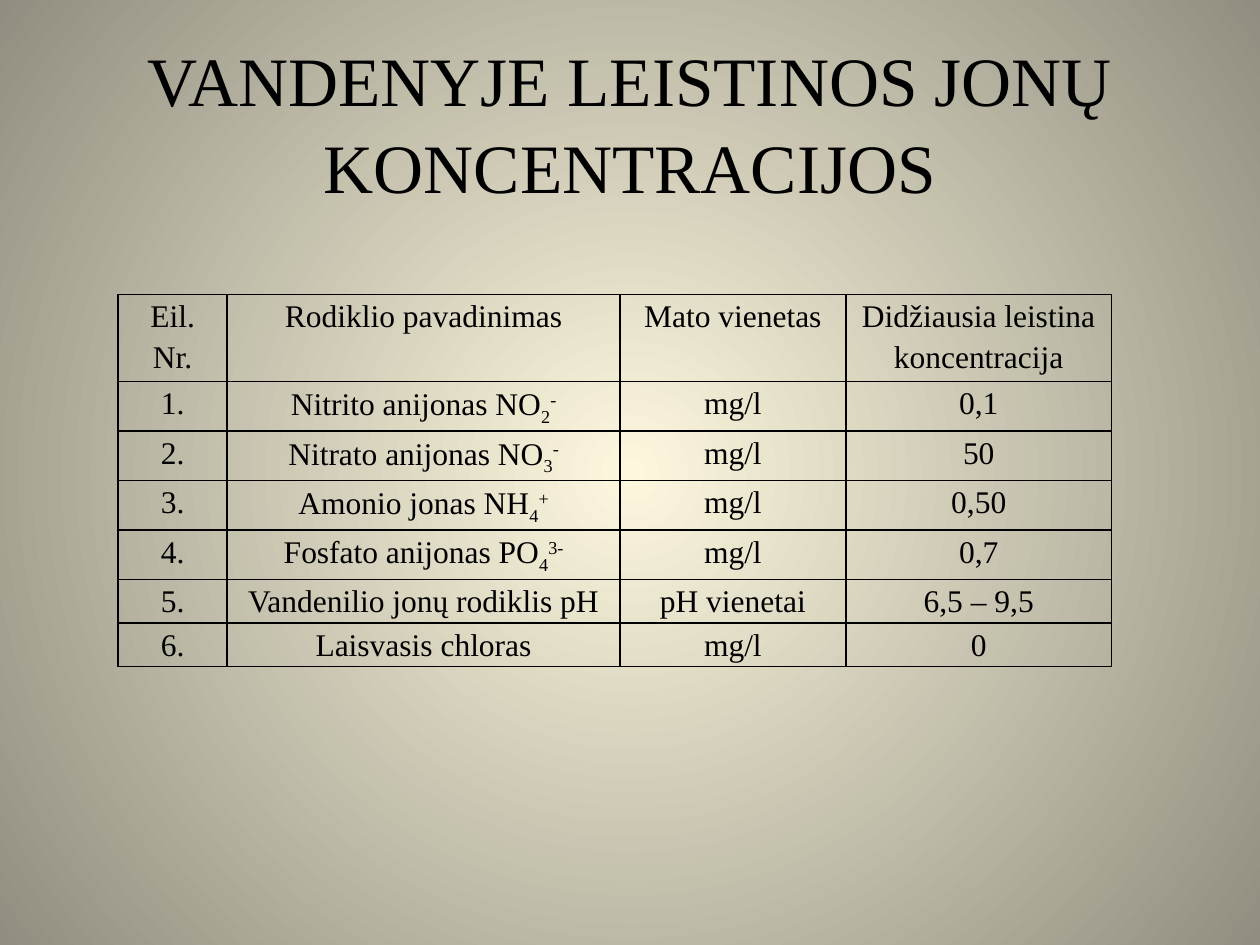
"""Builds a slide with a table of ion limits allowed in water."""
from lxml.etree import SubElement as Sub
from pptx import Presentation
from pptx.dml.color import RGBColor
from pptx.enum.text import MSO_ANCHOR as Anchor, PP_ALIGN as Align
from pptx.oxml.ns import qn
from pptx.util import Cm, Pt


def color(code):
    return RGBColor.from_string(code)


def write(frame, text, size=18, space=1.15, font="Times New Roman", ink="000000"):
    frame.word_wrap = True
    para = frame.paragraphs[0]
    para.alignment = Align.CENTER
    para.line_spacing = space
    for part, base in zip(text.split("|"), (0, -25, 30)):
        run = para.add_run()
        run.text = part
        run.font.size = Pt(size)
        run.font.name = font
        run.font.color.rgb = color(ink)
        if base:
            run.font._element.set("baseline", str(base * 1000))


deck = Presentation()
deck.slide_width, deck.slide_height = Cm(25.4), Cm(19.05)
slide = deck.slides.add_slide(deck.slide_layouts[6])

fill = slide.background.fill
fill.gradient()
for stop, code, place in zip(fill.gradient_stops, ("FCF7DD", "918E81"), (0, 1)):
    stop.color.rgb = color(code)
    stop.position = place
grad = slide.background._cSld.find(".//" + qn("a:gradFill"))
grad.remove(grad.find(qn("a:lin")))
path = Sub(grad, qn("a:path"), path="circle")
Sub(path, qn("a:fillToRect"), l="50000", t="50000", r="50000", b="50000")

title = slide.shapes.add_textbox(Cm(1.27), Cm(0.84), Cm(22.86), Cm(3.18)).text_frame
title.vertical_anchor = Anchor.MIDDLE
write(title, "VANDENYJE LEISTINOS JONŲ KONCENTRACIJOS", size=39.6, space=1.05)

rows = [
    ("Eil. Nr.", "Rodiklio pavadinimas", "Mato vienetas", "Didžiausia leistina koncentracija"),
    ("1.", "Nitrito anijonas NO|2|-", "mg/l", "0,1"),
    ("2.", "Nitrato anijonas NO|3|-", "mg/l", "50"),
    ("3.", "Amonio jonas NH|4|+", "mg/l", "0,50"),
    ("4.", "Fosfato anijonas PO|4|3-", "mg/l", "0,7"),
    ("5.", "Vandenilio jonų rodiklis pH", "pH vienetai", "6,5 – 9,5"),
    ("6.", "Laisvasis chloras", "mg/l", "0"),
]
widths = (2.2, 7.92, 4.55, 5.36)
table = slide.shapes.add_table(
    len(rows), len(widths), Cm(2.38), Cm(5.94), Cm(sum(widths)), Cm(6.46)).table
table.first_row = table.horz_banding = False
for col, width in zip(table.columns, widths):
    col.width = Cm(width)
for i, row in enumerate(rows):
    table.rows[i].height = Cm(0.81 if i else 1.6)
    for j, text in enumerate(row):
        cell = table.cell(i, j)
        cell.margin_left = cell.margin_right = Cm(0.18)
        cell.margin_top = cell.margin_bottom = 0
        write(cell.text_frame, text)
        props = cell._tc.get_or_add_tcPr()
        for side in "LRTB":
            line = Sub(props, qn("a:ln" + side), w=str(Pt(1)))
            Sub(Sub(line, qn("a:solidFill")), qn("a:srgbClr"), val="000000")
        cell.fill.background()

deck.save("out.pptx")
